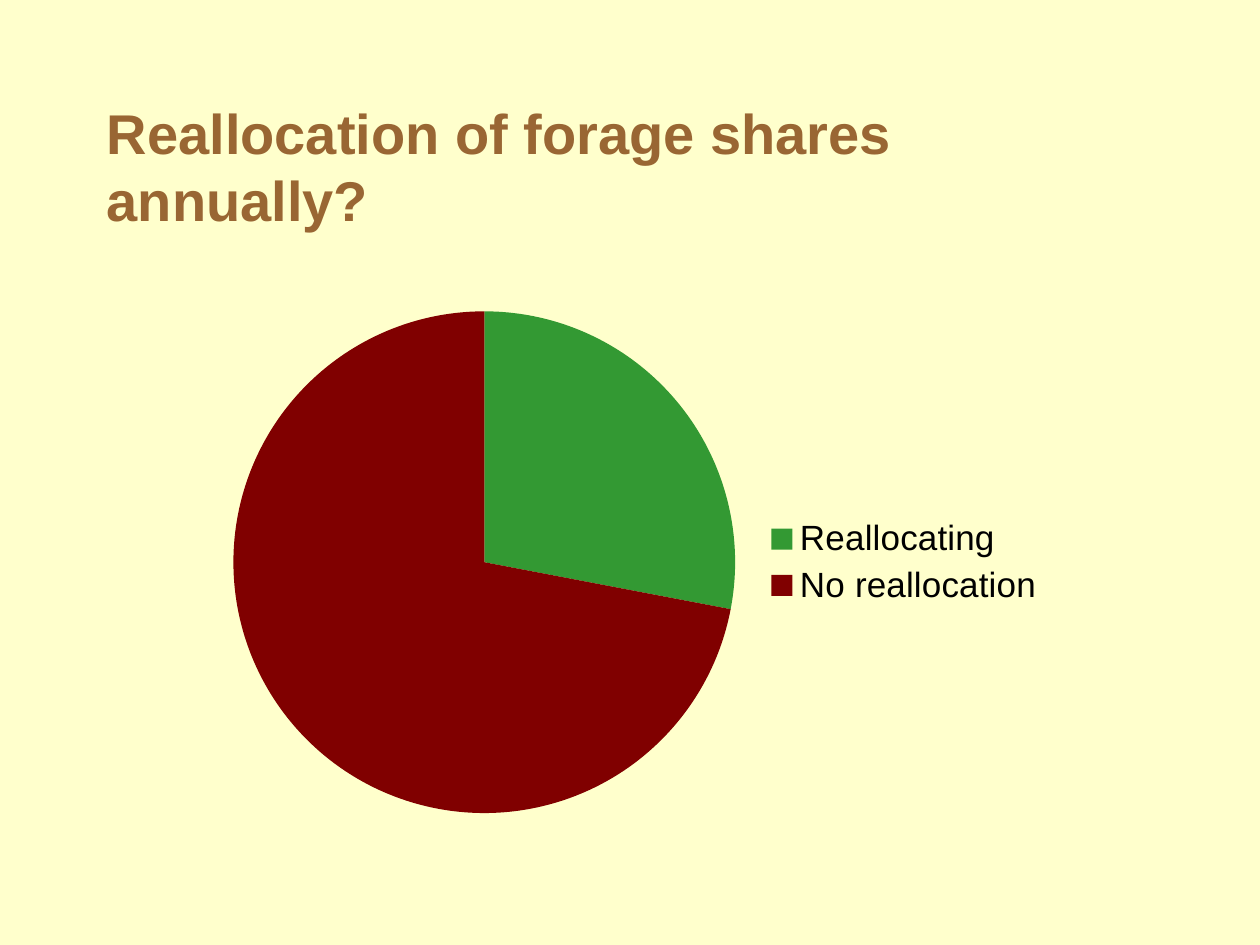
from lxml.etree import SubElement
from pptx import Presentation
from pptx.chart.data import CategoryChartData as ChartData
from pptx.dml.color import RGBColor
from pptx.enum.chart import XL_CHART_TYPE as ChartType, XL_LEGEND_POSITION as LegendPosition
from pptx.enum.text import MSO_ANCHOR as Anchor
from pptx.oxml.ns import qn
from pptx.util import Inches, Pt

CREAM = RGBColor(0xFF, 0xFF, 0xCC)
BROWN = RGBColor(0x99, 0x66, 0x33)
GREEN = RGBColor(0x33, 0x99, 0x33)
MAROON = RGBColor(0x80, 0x00, 0x00)
BLACK = RGBColor(0, 0, 0)

WIDTH, HEIGHT = Inches(10), Inches(7.5)
HEADING_BOX = (0.075, 0.09, 0.85, 0.17)
SHARES_BOX = (0.17, 0.3, 0.67, 0.59)
PIE_AREA = {"x": 0.02, "y": 0.05, "w": 0.6, "h": 0.9}
SHARES = {"Reallocating": (28, GREEN), "No reallocation": (72, MAROON)}
HEADING_FORMAT = {"name": "Arial", "size": Pt(32), "bold": True}
CHART_FORMAT = {"name": "Arial", "size": Pt(18)}
LEGEND_FORMAT = {"name": "Arial", "size": Pt(20)}


def to_slide(box):
    return [round(share * side) for share, side in zip(box, (WIDTH, HEIGHT) * 2)]


def style(font, color, values):
    for attribute, value in values.items():
        setattr(font, attribute, value)
    font.color.rgb = color


def place_pie(chart, area):
    plot_area = chart.element.find(".//" + qn("c:plotArea"))
    for old_layout in plot_area.findall(qn("c:layout")):
        plot_area.remove(old_layout)
    layout = SubElement(plot_area, qn("c:layout"))
    plot_area.insert(0, layout)
    manual = SubElement(layout, qn("c:manualLayout"))
    settings = {"layoutTarget": "inner", "xMode": "edge", "yMode": "edge", **area}
    for tag, value in settings.items():
        SubElement(manual, qn("c:" + tag)).set("val", str(value))


def add_heading(slide, box):
    heading = slide.shapes.add_textbox(*to_slide(box)).text_frame
    heading.word_wrap = True
    heading.vertical_anchor = Anchor.MIDDLE
    heading.text = "Reallocation of forage shares annually?"
    style(heading.paragraphs[0].runs[0].font, BROWN, HEADING_FORMAT)


def add_shares_pie(slide, box):
    data = ChartData()
    data.categories = list(SHARES)
    data.add_series("Series 1", [value for value, _ in SHARES.values()])
    chart = slide.shapes.add_chart(ChartType.PIE, *to_slide(box), data).chart
    style(chart.font, BLACK, CHART_FORMAT)
    chart.has_title = False
    chart.has_legend = True
    chart.legend.position = LegendPosition.RIGHT
    chart.legend.include_in_layout = False
    style(chart.legend.font, BLACK, LEGEND_FORMAT)
    pie = chart.plots[0]
    pie.vary_by_categories = True
    for index, (_, color) in enumerate(SHARES.values()):
        slice_format = pie.series[0].points[index].format
        slice_format.fill.solid()
        slice_format.fill.fore_color.rgb = color
        slice_format.line.fill.background()
    place_pie(chart, PIE_AREA)


def main():
    deck = Presentation()
    deck.slide_width, deck.slide_height = WIDTH, HEIGHT
    slide = deck.slides.add_slide(deck.slide_layouts[6])
    slide.background.fill.solid()
    slide.background.fill.fore_color.rgb = CREAM
    add_heading(slide, HEADING_BOX)
    add_shares_pie(slide, SHARES_BOX)
    deck.save("out.pptx")


if __name__ == "__main__":
    main()
